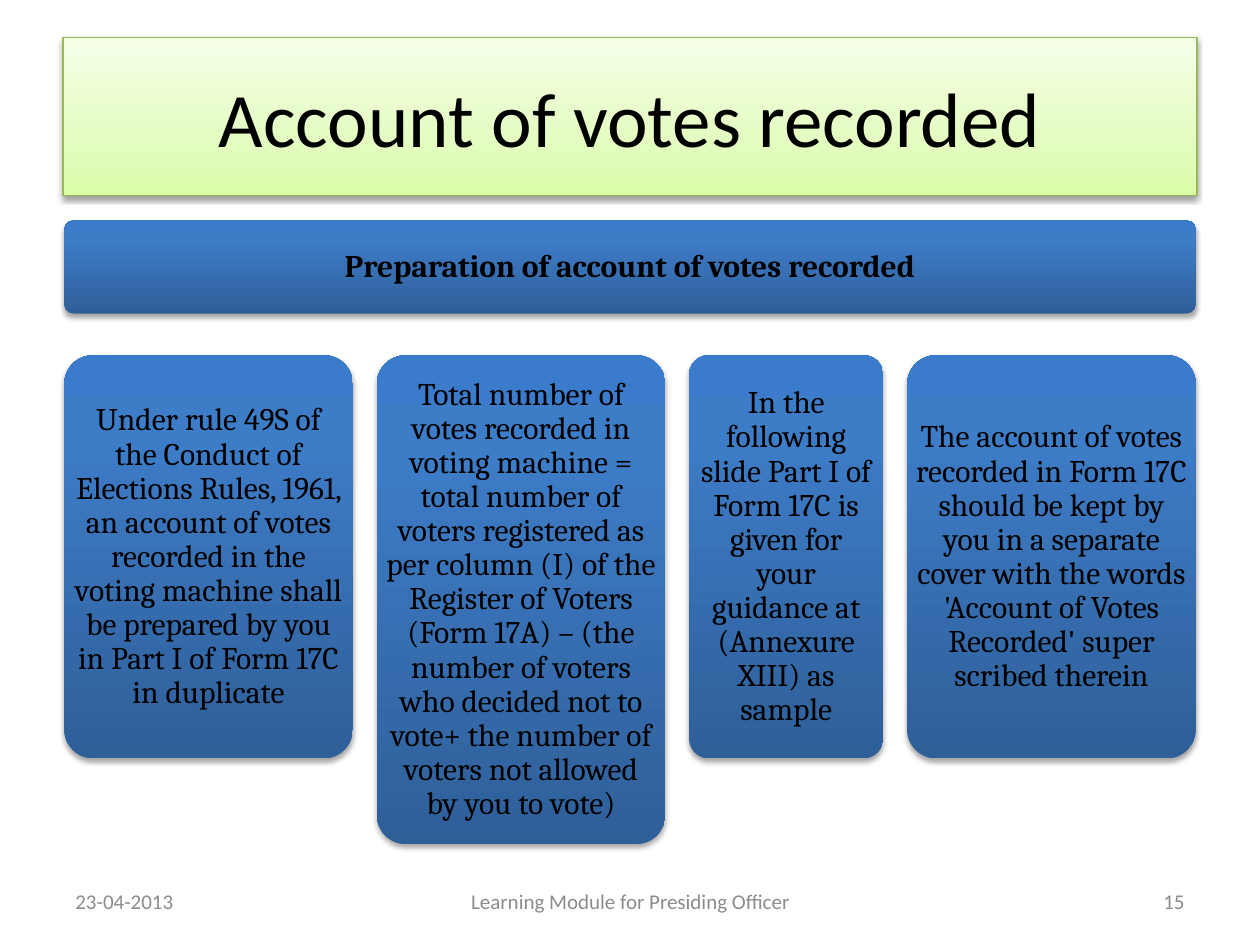
from lxml.etree import SubElement as Sub
from pptx import Presentation
from pptx.dml.color import RGBColor
from pptx.enum.shapes import MSO_SHAPE as Kind
from pptx.enum.text import MSO_ANCHOR as Anchor, PP_ALIGN as Align
from pptx.oxml.ns import qn
from pptx.util import Inches, Pt

TITLE = "Account of votes recorded"
HEAD = "Preparation of account of votes recorded"
CARDS = [
    (2.29, 3.2, "Under rule 49S of the Conduct of Elections Rules, 1961, an account of votes "
     "recorded in the voting machine shall be prepared by you in Part I of Form 17C in duplicate"),
    (2.29, 3.88, "Total number of votes recorded in voting machine = total number of voters "
     "registered as per column (I) of the Register of Voters (Form 17A) – (the number of voters "
     "who decided not to vote+ the number of voters not allowed by you to vote)"),
    (1.54, 3.2, "In the following slide Part I of Form 17C is given for your guidance at "
     "(Annexure XIII) as sample"),
    (2.29, 3.2, "The account of votes recorded in Form 17C should be kept by you in a separate "
     "cover with the words 'Account of Votes Recorded' super scribed therein"),
]
FOOT = [
    (0.5, 2.33, "23-04-2013", Align.LEFT),
    (3.42, 3.17, "Learning Module for Presiding Officer", Align.CENTER),
    (7.17, 2.33, "15", Align.RIGHT),
]
GREEN = [(0, "DAFDA7"), (35, "E4FCC2"), (100, "F5FFE7")]
BLUE = [(0, "2F5F99"), (80, "3D7CC7"), (100, "3A7CCB")]
LEFT, TOP, GAP = 0.51, 2.82, 0.19
ROUND, PAD = 0.1, 0.07


def color(code):
    return RGBColor.from_string(code)


def write(shape, text, size, face, ink="000000", align=Align.CENTER, bold=False):
    frame = shape.text_frame
    frame.word_wrap = True
    frame.vertical_anchor = Anchor.MIDDLE
    para = frame.paragraphs[0]
    para.text = text
    para.alignment = align
    font = para.font
    font.size, font.name, font.bold = Pt(size), face, bold
    font.color.rgb = color(ink)
    return para


def panel(kind, box, stops, alpha, drop):
    shape = slide.shapes.add_shape(kind, *map(Inches, box))
    shape.fill.gradient()
    shape.fill.gradient_angle = 90
    props = shape.element.spPr
    ramp = props.find(qn("a:gradFill")).find(qn("a:gsLst"))
    for old in list(ramp):
        ramp.remove(old)
    for spot, code in stops:
        stop = Sub(ramp, qn("a:gs"), pos=str(spot * 1000))
        Sub(stop, qn("a:srgbClr"), val=code)
    shape.line.fill.background()
    shape.shadow.inherit = False
    shade = Sub(props.find(qn("a:effectLst")), qn("a:outerShdw"), blurRad=str(Pt(3.1)),
                dist=str(Pt(drop)), dir="5400000", rotWithShape="0")
    tint = Sub(shade, qn("a:srgbClr"), val="000000")
    Sub(tint, qn("a:alpha"), val=str(alpha * 1000))
    return shape


def card(box, text, bold=False):
    shape = panel(Kind.ROUNDED_RECTANGLE, box, BLUE, 35, 1.8)
    shape.adjustments[0] = ROUND
    inset = Inches(max(0, PAD - 0.29 * ROUND * min(box[2:])))
    frame = shape.text_frame
    frame.margin_left = frame.margin_right = inset
    frame.margin_top = frame.margin_bottom = inset
    write(shape, text, 18, "Cambria", bold=bold).line_spacing = 0.9


deck = Presentation()
deck.slide_width, deck.slide_height = Inches(10), Inches(7.5)
slide = deck.slides.add_slide(deck.slide_layouts[6])

title = panel(Kind.RECTANGLE, (0.5, 0.3, 9, 1.25), GREEN, 38, 1.6)
title.line.color.rgb = color("98B955")
title.line.width = Pt(0.75)
write(title, TITLE, 44, "Calibri")

card((LEFT, 1.75, 8.98, 0.74), HEAD, bold=True)
x = LEFT
for wide, high, text in CARDS:
    card((x, TOP, wide, high), text)
    x += wide + GAP

for x, wide, text, align in FOOT:
    box = slide.shapes.add_textbox(*map(Inches, (x, 6.95, wide, 0.4)))
    write(box, text, 12, "Calibri", "8C8C8C", align)

deck.save("out.pptx")
